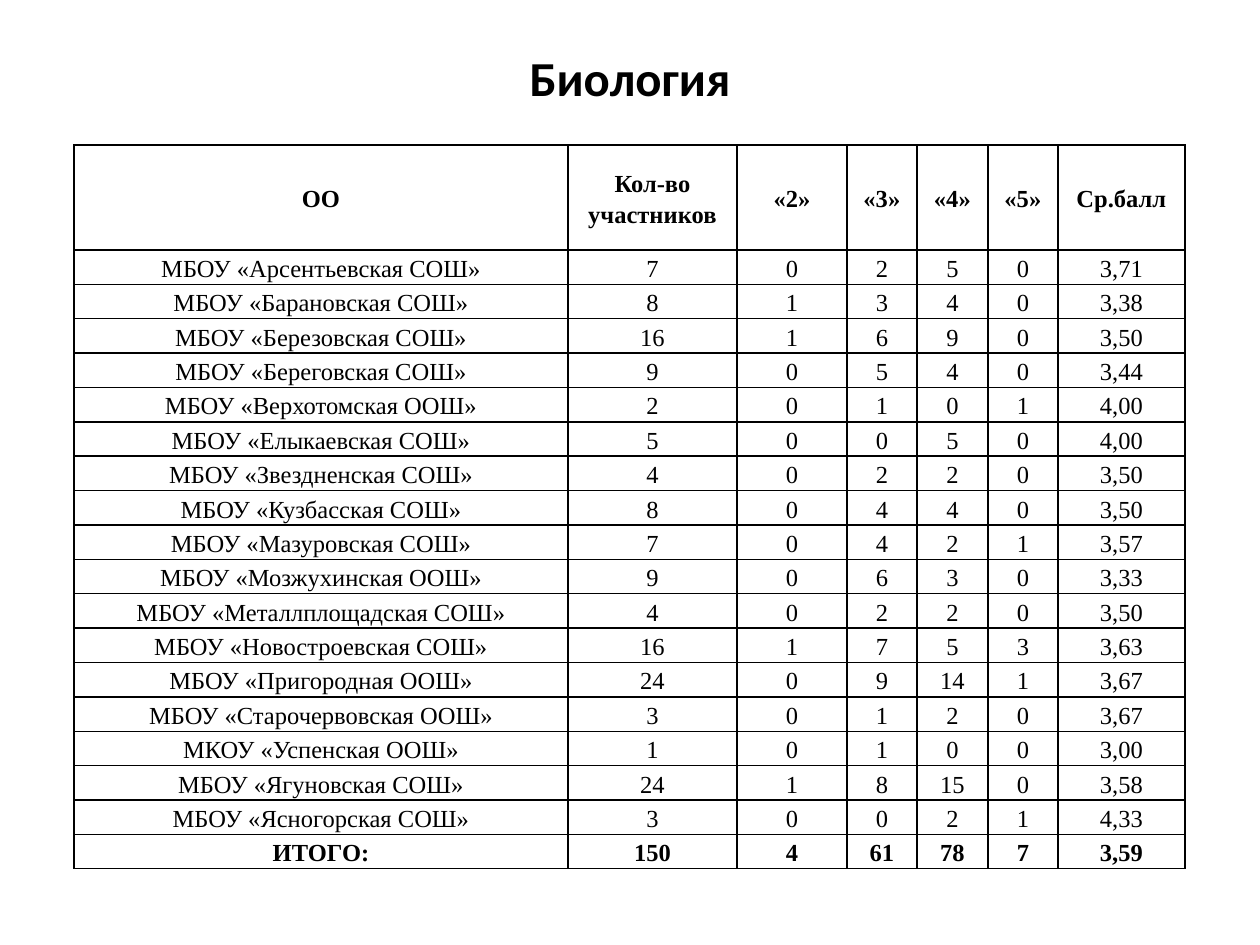
from dataclasses import dataclass

from lxml.etree import SubElement
from pptx import Presentation
from pptx.dml.color import RGBColor
from pptx.enum.text import MSO_ANCHOR as Anchor, PP_ALIGN as Align
from pptx.oxml.ns import qn
from pptx.util import Pt

PX = 914400 / 126  # EMU in one px


@dataclass(frozen=True)
class Theme:
    ink: str = "000000"
    paper: str = "FFFFFF"
    title_font: str = "Calibri"
    table_font: str = "Times New Roman"
    title_size: float = 27.9
    table_size: int = 14
    border_width: int = 1
    line_spacing: float = 1.15


THEME = Theme()

HEADER = ["ОО", "Кол-во участников", "«2»", "«3»", "«4»", "«5»", "Ср.балл"]
SCHOOLS = [
    ["МБОУ «Арсентьевская СОШ»", 7, 0, 2, 5, 0, "3,71"],
    ["МБОУ «Барановская СОШ»", 8, 1, 3, 4, 0, "3,38"],
    ["МБОУ «Березовская СОШ»", 16, 1, 6, 9, 0, "3,50"],
    ["МБОУ «Береговская СОШ»", 9, 0, 5, 4, 0, "3,44"],
    ["МБОУ «Верхотомская ООШ»", 2, 0, 1, 0, 1, "4,00"],
    ["МБОУ «Елыкаевская СОШ»", 5, 0, 0, 5, 0, "4,00"],
    ["МБОУ «Звездненская СОШ»", 4, 0, 2, 2, 0, "3,50"],
    ["МБОУ «Кузбасская СОШ»", 8, 0, 4, 4, 0, "3,50"],
    ["МБОУ «Мазуровская СОШ»", 7, 0, 4, 2, 1, "3,57"],
    ["МБОУ «Мозжухинская ООШ»", 9, 0, 6, 3, 0, "3,33"],
    ["МБОУ «Металлплощадская СОШ»", 4, 0, 2, 2, 0, "3,50"],
    ["МБОУ «Новостроевская СОШ»", 16, 1, 7, 5, 3, "3,63"],
    ["МБОУ «Пригородная ООШ»", 24, 0, 9, 14, 1, "3,67"],
    ["МБОУ «Старочервовская ООШ»", 3, 0, 1, 2, 0, "3,67"],
    ["МКОУ «Успенская ООШ»", 1, 0, 1, 0, 0, "3,00"],
    ["МБОУ «Ягуновская СОШ»", 24, 1, 8, 15, 0, "3,58"],
    ["МБОУ «Ясногорская СОШ»", 3, 0, 0, 2, 1, "4,33"],
]
TOTAL = ["ИТОГО:", 150, 4, 61, 78, 7, "3,59"]
COLUMN_WIDTHS = [494, 169, 110, 70, 71, 70, 127]
HEADER_HEIGHT = 105


def px(length):
    return round(length * PX)


def style_text(text_frame, font_name, size, bold):
    for paragraph in text_frame.paragraphs:
        paragraph.alignment = Align.CENTER
        for run in paragraph.runs:
            run.font.name = font_name
            run.font.size = Pt(size)
            run.font.bold = bold
            run.font.color.rgb = RGBColor.from_string(THEME.ink)


def add_borders(cell):
    properties = cell._tc.get_or_add_tcPr()
    for position, side in enumerate(("a:lnL", "a:lnR", "a:lnT", "a:lnB")):
        line = SubElement(properties, qn(side), w=str(Pt(THEME.border_width)))
        fill = SubElement(line, qn("a:solidFill"))
        SubElement(fill, qn("a:srgbClr"), val=THEME.ink)
        properties.insert(position, line)  # borders precede the fill


def add_title(slide, box, text):
    shape = slide.shapes.add_textbox(*map(px, box))
    text_frame = shape.text_frame
    text_frame.word_wrap = True
    text_frame.vertical_anchor = Anchor.TOP
    text_frame.margin_top = px(10)
    text_frame.text = text
    style_text(text_frame, THEME.title_font, THEME.title_size, True)


def fill_cell(cell, value, bold):
    cell.fill.solid()
    cell.fill.fore_color.rgb = RGBColor.from_string(THEME.paper)
    cell.vertical_anchor = Anchor.MIDDLE
    cell.margin_left = cell.margin_right = px(8)
    cell.margin_top = cell.margin_bottom = 0
    cell.text_frame.text = str(value)
    cell.text_frame.paragraphs[0].line_spacing = THEME.line_spacing
    style_text(cell.text_frame, THEME.table_font, THEME.table_size, bold)
    add_borders(cell)


def add_results_table(slide, box):
    rows = [HEADER, *SCHOOLS, TOTAL]
    table = slide.shapes.add_table(len(rows), len(HEADER), *map(px, box)).table
    table.horz_banding = False

    # Grid: fixed header, the remaining height shared equally
    for column, width in zip(table.columns, COLUMN_WIDTHS):
        column.width = px(width)
    body_height = (box[3] - HEADER_HEIGHT) / (len(rows) - 1)
    for index, row in enumerate(table.rows):
        row.height = px(body_height if index else HEADER_HEIGHT)

    # Header and total are bold
    for row, values in zip(table.rows, rows):
        bold = values is HEADER or values is TOTAL
        for cell, value in zip(row.cells, values):
            fill_cell(cell, value, bold)


def main():
    presentation = Presentation()
    presentation.slide_width, presentation.slide_height = px(1260), px(945)
    slide = presentation.slides.add_slide(presentation.slide_layouts[6])
    add_title(slide, (63, 38, 1134, 158), "Биология")
    add_results_table(slide, (74, 145, sum(COLUMN_WIDTHS), 724))
    presentation.save("out.pptx")


if __name__ == "__main__":
    main()
